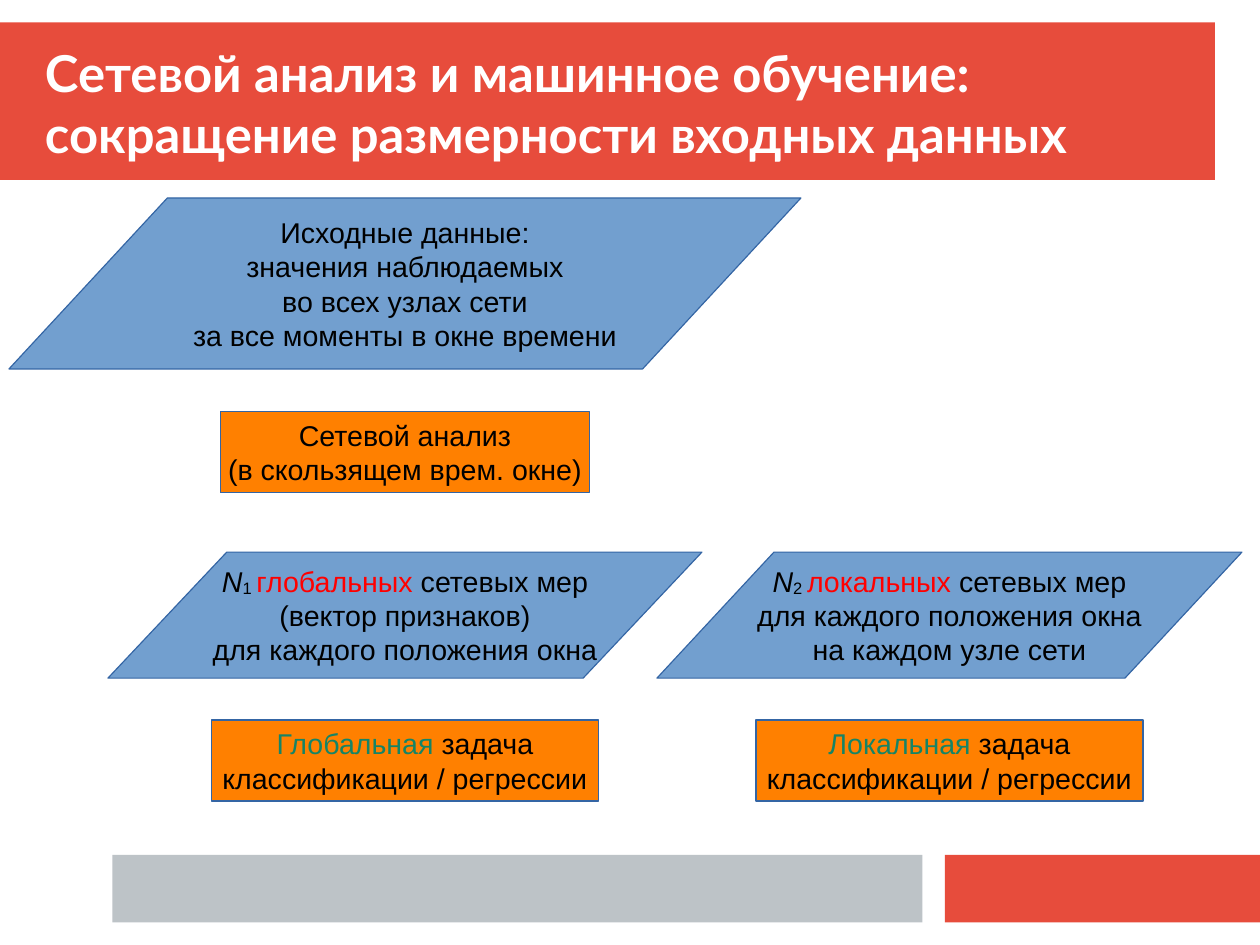
"""Build the slide on network analysis and reduction of input data."""
import pptx
import pptx.dml.color
import pptx.enum.shapes
import pptx.enum.text
import pptx.util

Cm, Pt = pptx.util.Cm, pptx.util.Pt
SHAPES = pptx.enum.shapes.MSO_SHAPE
ALIGN = pptx.enum.text.PP_ALIGN
MIDDLE = pptx.enum.text.MSO_ANCHOR.MIDDLE
COLORS = {
    "band": "E74C3C", "footer": "BDC3C7", "data": "729FCF", "process": "FF8000",
    "outline": "3465A4", "text": "000000", "title": "FFFFFF",
    "measure": "FF0000", "task": "158466",
}


def rgb(name):
    return pptx.dml.color.RGBColor.from_string(COLORS[name])


def format_run(r, font, size, color):
    r.font.name = font
    r.font.size = Pt(size)
    r.font.color.rgb = rgb(color)


def add_block(s, kind, box, fill):
    sp = s.shapes.add_shape(kind, *map(Cm, box))
    sp.shadow.inherit = False
    sp.fill.solid()
    sp.fill.fore_color.rgb = rgb(fill)
    sp.line.fill.background()
    return sp


def add_node(s, kind, box, fill, lines):
    sp = add_block(s, kind, box, fill)
    sp.line.color.rgb = rgb("outline")
    sp.line.width = Pt(0)
    tf = sp.text_frame
    tf.word_wrap = False
    tf.vertical_anchor = MIDDLE
    for i, line in enumerate(lines):
        p = tf.add_paragraph() if i else tf.paragraphs[0]
        p.alignment = ALIGN.CENTER
        for text, style in line:
            r = p.add_run()
            r.text = text
            format_run(r, "Arial", 18, style if style in COLORS else "text")
            if style == "italic":
                r.font.italic = True
            elif style == "subscript":
                r.font._element.set("baseline", "-8000")


def plain(*lines):
    return [[(line, "text")] for line in lines]


def add_data(s, box, lines):
    add_node(s, SHAPES.FLOWCHART_DATA, box, "data", lines)


def add_process(s, box, lines):
    add_node(s, SHAPES.FLOWCHART_PROCESS, box, "process", lines)


def add_measures(s, left, width, index, scope, *rest):
    head = [("N", "italic"), (f"{index} ", "subscript"),
            (scope, "measure"), (" сетевых мер", "text")]
    add_data(s, (left, 12.27, width, 2.8), [head, *plain(*rest)])


def add_task(s, left, scope):
    head = [(scope, "task"), (" задача", "text")]
    add_process(s, (left, 16, 8.6, 1.8), [head, *plain("классификации / регрессии")])


def add_title(s, text):
    sp = s.shapes.title
    sp.left, sp.top, sp.width, sp.height = map(Cm, (1, 0.85, 26, 2.85))
    tf = sp.text_frame
    tf.text = text
    tf.word_wrap = True
    tf.auto_size = pptx.enum.text.MSO_AUTO_SIZE.NONE
    tf.vertical_anchor = MIDDLE
    tf.margin_left = tf.margin_right = tf.margin_top = tf.margin_bottom = 0
    p = tf.paragraphs[0]
    p.alignment = ALIGN.LEFT
    r = p.runs[0]
    format_run(r, "Lato", 32, "title")
    r.font.bold = True
    sp.element.getparent().append(sp.element)


def main():
    prs = pptx.Presentation()
    prs.slide_width, prs.slide_height = Cm(28), Cm(21)
    s = prs.slides.add_slide(prs.slide_layouts.get_by_name("Title Only"))

    add_block(s, SHAPES.RECTANGLE, (0, 0.5, 27, 3.5), "band")
    add_block(s, SHAPES.RECTANGLE, (21, 19, 7, 1.5), "band")
    add_block(s, SHAPES.RECTANGLE, (2.5, 19, 18, 1.5), "footer")

    add_data(s, (0.2, 4.4, 17.6, 3.8), plain(
        "Исходные данные:", "значения наблюдаемых",
        "во всех узлах сети", "за все моменты в окне времени"))
    add_process(s, (4.9, 9.15, 8.2, 1.8), plain(
        "Сетевой анализ", "(в скользящем врем. окне)"))
    add_measures(s, 2.4, 13.2, 1, "глобальных",
                 "(вектор признаков)", "для каждого положения окна")
    add_task(s, 4.7, "Глобальная")
    add_measures(s, 14.6, 13, 2, "локальных",
                 "для каждого положения окна", "на каждом узле сети")
    add_task(s, 16.8, "Локальная")

    add_title(s, "Сетевой анализ и машинное обучение: "
                 "сокращение размерности входных данных")
    prs.save("out.pptx")


if __name__ == "__main__":
    main()
